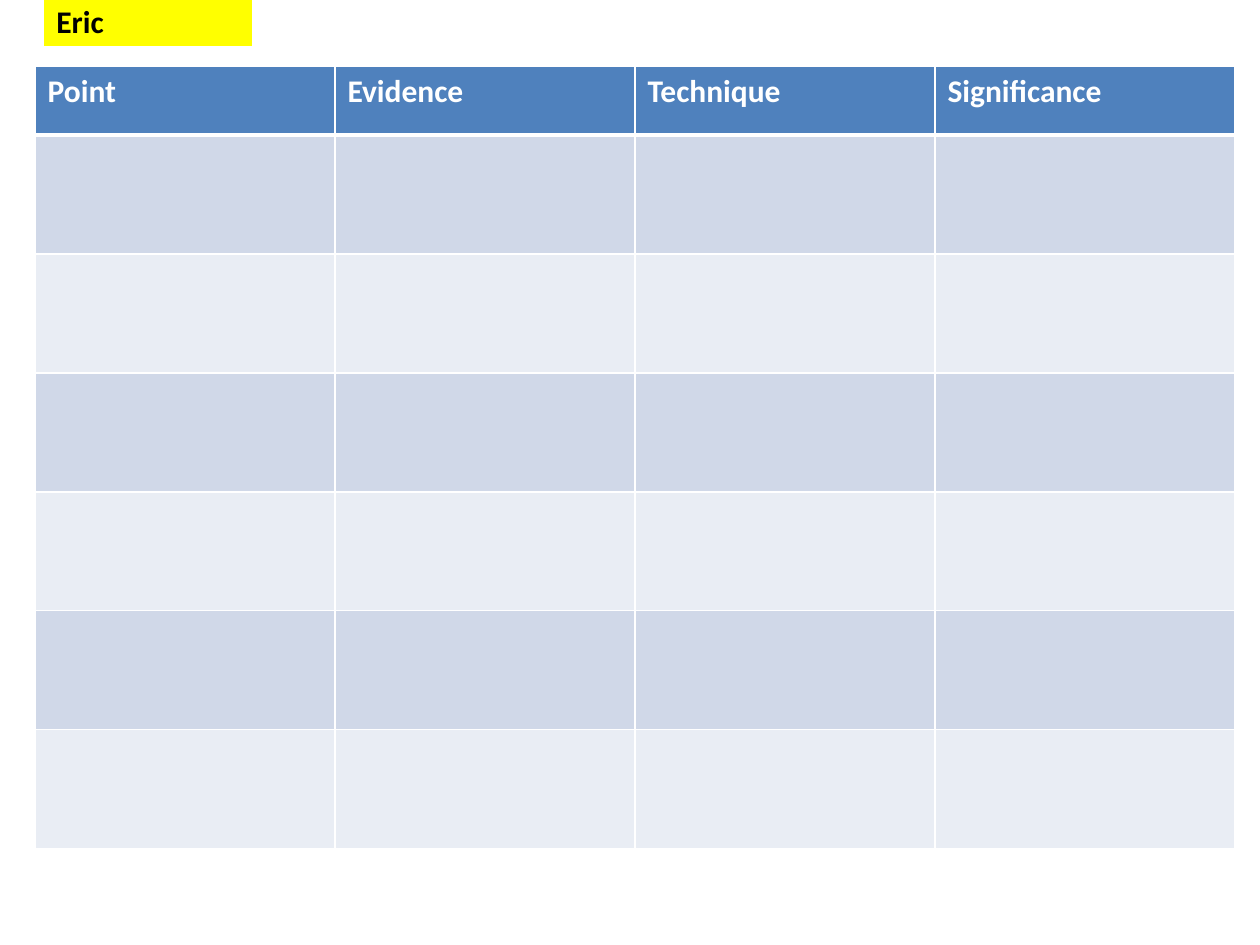
from dataclasses import dataclass

from lxml import etree
from pptx import Presentation
from pptx import util as u
from pptx.dml.color import RGBColor
from pptx.enum import text
from pptx.oxml import ns

SCALE = 914400 / 126  # EMU per px
HEX = {
    "head": "4F81BD",
    "odd": "D0D8E8",
    "even": "E9EDF4",
    "rule": "FFFFFF",
    "label": "FFFF00",
    "dark": "000000",
    "light": "FFFFFF",
}
FONT = {"name": "Calibri", "size": u.Pt(18), "bold": True}
HEADS = ["Point", "Evidence", "Technique", "Significance"]
BODY_ROWS = 6


@dataclass
class Box:
    left: int
    top: int
    width: int
    height: int

    def emu(self) -> list[u.Emu]:
        return [px(n) for n in (self.left, self.top, self.width, self.height)]


LABEL = Box(44, -4, 208, 50)
HEAD = Box(35, 66, 300, 69)  # first header cell
BODY_HIGH = 119


def px(count: int) -> u.Emu:
    return u.Emu(round(count * SCALE))


def paint(part, color: str) -> None:
    part.fill.solid()
    part.fill.fore_color.rgb = RGBColor.from_string(HEX[color])


def write(frame, words: str, color: str) -> None:
    run = frame.paragraphs[0].add_run()
    run.text = words
    for name, value in FONT.items():
        setattr(run.font, name, value)
    run.font.color.rgb = RGBColor.from_string(HEX[color])


def rule(cell, base: int, top: int) -> None:
    """Draw the cell's borders, with widths in points."""
    props = cell._tc.get_or_add_tcPr()
    for side, width in {"L": 1, "R": 1, "T": top, "B": base}.items():
        line = etree.SubElement(props, ns.qn(f"a:ln{side}"), w=str(u.Pt(width)))
        fill = etree.SubElement(line, ns.qn("a:solidFill"))
        etree.SubElement(fill, ns.qn("a:srgbClr"), val=HEX["rule"])


def draw_table(slide) -> None:
    area = Box(HEAD.left, HEAD.top, HEAD.width * len(HEADS),
               HEAD.height + BODY_HIGH * BODY_ROWS)
    table = slide.shapes.add_table(BODY_ROWS + 1, len(HEADS), *area.emu()).table
    for col in table.columns:
        col.width = px(HEAD.width)
    for i, row in enumerate(table.rows):
        row.height = px(BODY_HIGH if i else HEAD.height)
        shade = "head" if i == 0 else "odd" if i % 2 else "even"
        for cell in row.cells:
            rule(cell, base=1 if i else 3, top=3 if i == 1 else 1)
            paint(cell, shade)
    for cell, words in zip(table.rows[0].cells, HEADS):
        write(cell.text_frame, words, "light")


def draw_label(slide) -> None:
    label = slide.shapes.add_textbox(*LABEL.emu())
    paint(label, "label")
    frame = label.text_frame
    frame.word_wrap = True
    frame.auto_size = text.MSO_AUTO_SIZE.SHAPE_TO_FIT_TEXT
    write(frame, "Eric", "dark")


def main() -> None:
    deck = Presentation()
    deck.slide_width, deck.slide_height = u.Inches(10), u.Inches(7.5)
    slide = deck.slides.add_slide(deck.slide_layouts[6])
    draw_table(slide)
    draw_label(slide)
    deck.save("out.pptx")


if __name__ == "__main__":
    main()
